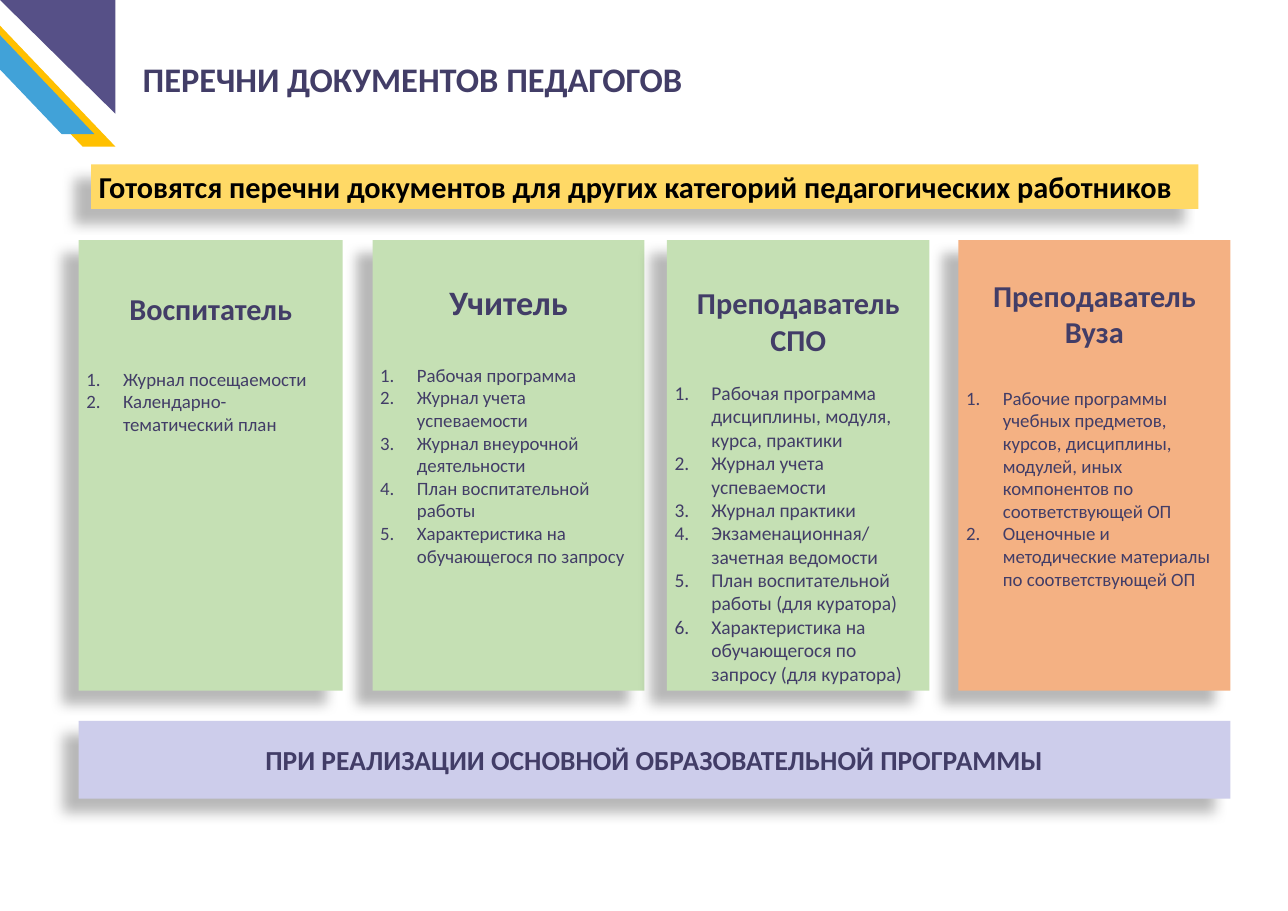
from dataclasses import dataclass

from lxml import etree
from pptx import Presentation
from pptx.dml.color import RGBColor
from pptx.enum.shapes import MSO_SHAPE
from pptx.enum.text import MSO_ANCHOR, MSO_AUTO_SIZE, PP_ALIGN
from pptx.oxml.ns import qn
from pptx.util import Pt

RECT = MSO_SHAPE.RECTANGLE
TOP, MIDDLE = MSO_ANCHOR.TOP, MSO_ANCHOR.MIDDLE
LEFT, CENTER = PP_ALIGN.LEFT, PP_ALIGN.CENTER


@dataclass(frozen=True)
class Theme:
    font: str = "Calibri"
    ink: str = "423D67"
    black: str = "000000"
    green: str = "C5E0B4"
    orange: str = "F4B183"
    lilac: str = "CDCDEB"
    yellow: str = "FFD966"
    gold: str = "FFC000"
    blue: str = "41A2D8"
    violet: str = "565087"
    title: float = 31.8
    banner: float = 28
    head: float = 28
    large: float = 31.6
    item: float = 17.4
    footer: float = 25.4


T = Theme()
TITLE = "ПЕРЕЧНИ ДОКУМЕНТОВ ПЕДАГОГОВ"
BANNER = "Готовятся перечни документов для других категорий педагогических работников"
FOOTER = "ПРИ РЕАЛИЗАЦИИ ОСНОВНОЙ ОБРАЗОВАТЕЛЬНОЙ ПРОГРАММЫ"

# heading, heading size, item size, left, width, space above, space below, fill, items
CARDS = [
    ("Воспитатель", T.head, T.item, 72.7, 244, 46, 38, T.green, [
        "Журнал посещаемости",
        "Календарно-тематический план",
    ]),
    ("Учитель", T.large, T.item, 344.2, 251.3, 38, 38, T.green, [
        "Рабочая программа",
        "Журнал учета успеваемости",
        "Журнал внеурочной деятельности",
        "План воспитательной работы",
        "Характеристика на обучающегося по запросу",
    ]),
    ("Преподаватель СПО", T.head, 18, 616.3, 242.6, 41, 22, T.green, [
        "Рабочая программа дисциплины, модуля, курса, практики",
        "Журнал учета успеваемости",
        "Журнал практики",
        "Экзаменационная/ зачетная ведомости",
        "План воспитательной работы (для куратора)",
        "Характеристика на обучающегося по запросу (для куратора)",
    ]),
    ("Преподаватель Вуза", T.head, T.item, 885.6, 251.3, 34, 34, T.orange, [
        "Рабочие программы учебных предметов, курсов, дисциплины, модулей, "
        "иных компонентов по соответствующей ОП",
        "Оценочные и методические материалы по соответствующей ОП",
    ]),
]
CARD_TOP, CARD_HIGH = 221.8, 416.2
INDENT = 34

CORNER = [
    (T.gold, [(0, 23.7), (106.6, 135.4), (76.3, 135.4), (0, 55.4)]),
    (T.blue, [(0, 32.5), (87.1, 123.8), (56.9, 123.8), (0, 64.2)]),
    (T.violet, [(0, 0), (106.6, 0), (106.6, 105.1)]),
]


def paint(shape, color):
    shape.shadow.inherit = False
    shape.fill.solid()
    shape.fill.fore_color.rgb = RGBColor.from_string(color)
    shape.line.fill.background()


def cast(shape):
    """Give the shape a soft shadow towards the lower left."""
    effects = shape._element.spPr.find(qn("a:effectLst"))
    shadow = etree.SubElement(
        effects, qn("a:outerShdw"), blurRad=str(Pt(11.8)), dist=str(Pt(19.7)),
        dir=str(141 * 60000), algn="tr", rotWithShape="0")
    tint = etree.SubElement(shadow, qn("a:srgbClr"), val=T.black)
    etree.SubElement(tint, qn("a:alpha"), val="28000")


def number(para):
    props = para._p.get_or_add_pPr()
    props.set("marL", str(Pt(INDENT)))
    props.set("indent", str(Pt(-INDENT)))
    etree.SubElement(props, qn("a:buFont"), typeface="+mj-lt")
    etree.SubElement(props, qn("a:buAutoNum"), type="arabicPeriod")


def write(para, text, size, align=LEFT, bold=True, color=T.ink):
    para.text = text
    para.alignment = align
    font = para.font
    font.name, font.size, font.bold = T.font, Pt(size), bold
    font.color.rgb = RGBColor.from_string(color)


def panel(slide, box, color, anchor=MIDDLE):
    shape = slide.shapes.add_shape(RECT, *map(Pt, box))
    paint(shape, color)
    cast(shape)
    frame = shape.text_frame
    frame.word_wrap = True
    frame.vertical_anchor = anchor
    return frame


def card(slide, head, size, small, left, width, above, below, color, items):
    frame = panel(slide, (left, CARD_TOP, width, CARD_HIGH), color, TOP)
    frame.margin_top = Pt(above)
    first = frame.paragraphs[0]
    first.space_after = Pt(below)
    write(first, head, size, CENTER)
    for item in items:
        para = frame.add_paragraph()
        number(para)
        write(para, item, small, bold=False)


def main():
    deck = Presentation()
    deck.slide_width, deck.slide_height = Pt(1190.16), Pt(841.68)
    slide = deck.slides.add_slide(deck.slide_layouts[5])

    for color, points in CORNER:
        start, *rest = [(Pt(x), Pt(y)) for x, y in points]
        path = slide.shapes.build_freeform(*start)
        path.add_line_segments(rest, close=True)
        paint(path.convert_to_shape(), color)

    title = slide.shapes.title
    title.left, title.top, title.width, title.height = map(Pt, (124.6, 49.7, 846, 46))
    frame = title.text_frame
    frame.auto_size = MSO_AUTO_SIZE.NONE
    frame.vertical_anchor = MIDDLE
    write(frame.paragraphs[0], TITLE, T.title)

    for spec in CARDS:
        card(slide, *spec)

    frame = panel(slide, (72.7, 666, 1064.2, 72), T.lilac)
    write(frame.paragraphs[0], FOOTER, T.footer, CENTER)

    frame = panel(slide, (84.2, 152, 1023.1, 41), T.yellow)
    write(frame.paragraphs[0], BANNER, T.banner, color=T.black)

    deck.save("out.pptx")


if __name__ == "__main__":
    main()
